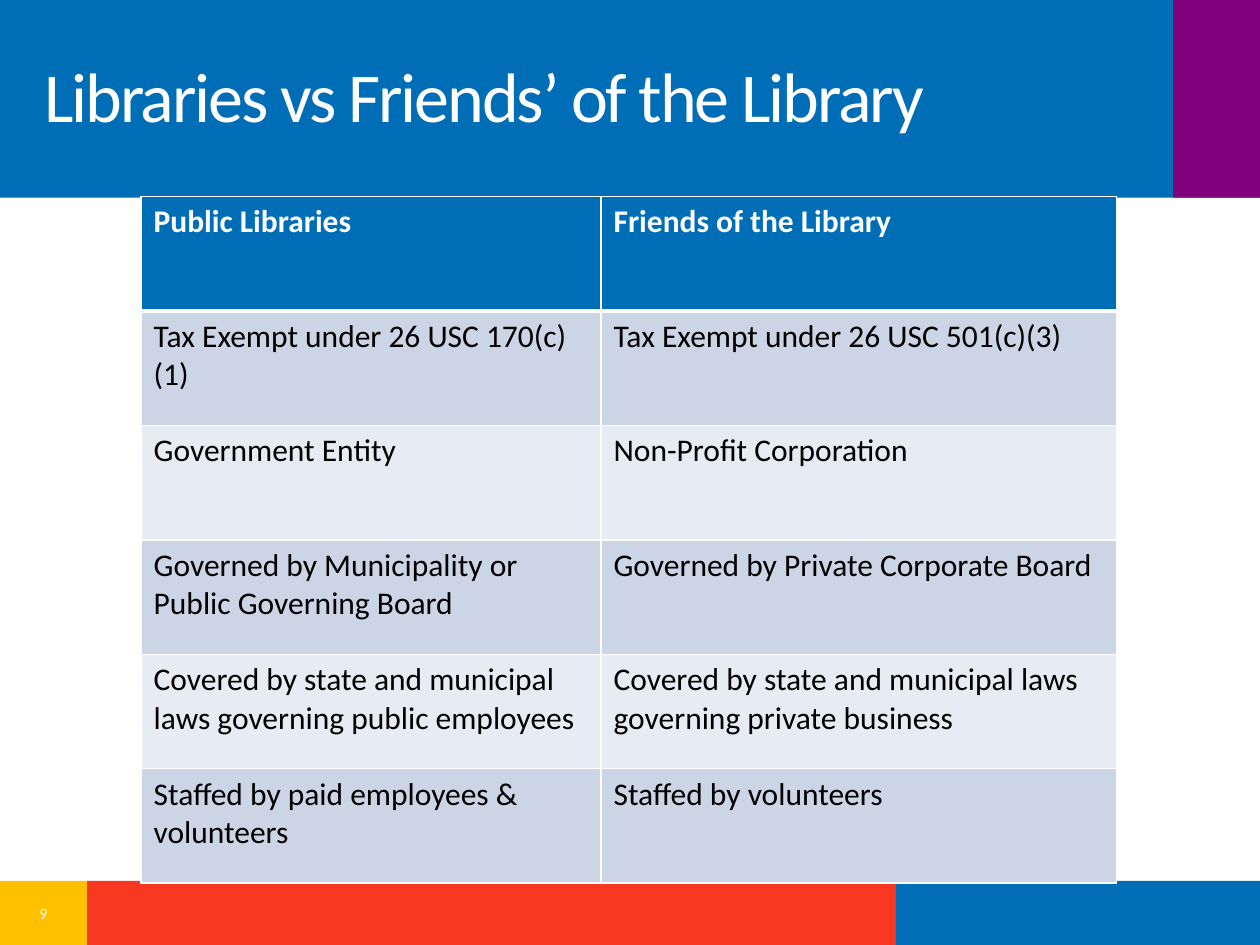
from lxml.etree import SubElement
from pptx import Presentation
from pptx.dml.color import RGBColor
from pptx.enum.shapes import MSO_SHAPE
from pptx.enum.text import MSO_ANCHOR, PP_ALIGN
from pptx.oxml.ns import qn
from pptx.util import Inches, Pt

FONT = "Calibri"
WHITE, BLACK, BLUE = "FFFFFF", "000000", "006EB6"
BANDS = [
    (0.69, 6.99, 8.04, 0.51, "F93822"),
    (0, 6.99, 0.69, 0.51, "FFC000"),
    (7.11, 6.99, 2.89, 0.51, BLUE),
    (0, 0, 10, 1.57, BLUE),
    (9.31, 0, 0.69, 1.57, "82027E"),
]
ROWS = [
    ("Public Libraries", "Friends of the Library"),
    ("Tax Exempt under 26 USC 170(c)(1)", "Tax Exempt under 26 USC 501(c)(3)"),
    ("Government Entity", "Non-Profit Corporation"),
    ("Governed by Municipality or Public Governing Board",
     "Governed by Private Corporate Board"),
    ("Covered by state and municipal laws governing public employees",
     "Covered by state and municipal laws governing private business"),
    ("Staffed by paid employees & volunteers", "Staffed by volunteers"),
]
WIDTHS = (3.65, 4.09)
ROW_HEIGHT = 5.45 / len(ROWS)


def rgb(code):
    return RGBColor.from_string(code)


def style(part, size, color, bold=False):
    """Format every run of a paragraph."""
    for run in part.runs:
        font = run.font
        font.name, font.size, font.bold = FONT, Pt(size), bold
        font.color.rgb = rgb(color)


def add_band(slide, left, top, width, height, color):
    band = slide.shapes.add_shape(
        MSO_SHAPE.RECTANGLE, Inches(left), Inches(top), Inches(width), Inches(height))
    band.shadow.inherit = False
    band.fill.solid()
    band.fill.fore_color.rgb = rgb(color)
    band.line.fill.background()


def set_title(slide, text):
    title = slide.shapes.title
    title.left, title.top = Inches(0.25), Inches(0.11)
    title.width, title.height = Inches(8.62), Inches(1.45)
    frame = title.text_frame
    frame.text = text
    frame.word_wrap = True
    frame.vertical_anchor = MSO_ANCHOR.MIDDLE
    part = frame.paragraphs[0]
    part.alignment = PP_ALIGN.LEFT
    part.line_spacing = 0.7
    style(part, 40, WHITE)
    part.runs[0].font._element.set("spc", "-120")
    # Bring the title in front of the bands
    slide.shapes._spTree.append(title._element)


def add_border(cell, side, width):
    line = SubElement(cell._tc.get_or_add_tcPr(), qn(f"a:ln{side}"), w=str(Pt(width)))
    fill = SubElement(line, qn("a:solidFill"))
    SubElement(fill, qn("a:srgbClr"), val=WHITE)


def fill_cell(cell, text, row):
    head = row == 0
    widths = {"L": 1, "R": 1, "T": 3 if row == 1 else 1, "B": 3 if head else 1}
    for side, width in widths.items():
        add_border(cell, side, width)
    cell.fill.solid()
    cell.fill.fore_color.rgb = rgb(BLUE if head else "CCD5E5" if row % 2 else "E7EBF3")
    cell.text_frame.text = text
    style(cell.text_frame.paragraphs[0], 18, WHITE if head else BLACK, head)


def add_grid(slide):
    table = slide.shapes.add_table(
        len(ROWS), len(WIDTHS), Inches(1.12), Inches(1.56),
        Inches(sum(WIDTHS)), Inches(ROW_HEIGHT * len(ROWS))).table
    for column, width in zip(table.columns, WIDTHS):
        column.width = Inches(width)
    for r, texts in enumerate(ROWS):
        table.rows[r].height = Inches(ROW_HEIGHT)
        for c, text in enumerate(texts):
            fill_cell(table.cell(r, c), text, r)


def add_number(slide, text):
    box = slide.shapes.add_textbox(Inches(0), Inches(7.05), Inches(0.69), Inches(0.4))
    frame = box.text_frame
    frame.text = text
    frame.word_wrap = True
    frame.vertical_anchor = MSO_ANCHOR.MIDDLE
    part = frame.paragraphs[0]
    part.alignment = PP_ALIGN.CENTER
    style(part, 9, WHITE)


def main():
    deck = Presentation()
    deck.slide_width, deck.slide_height = Inches(10), Inches(7.5)
    slide = deck.slides.add_slide(deck.slide_layouts[5])
    for band in BANDS:
        add_band(slide, *band)
    set_title(slide, "Libraries vs Friends’ of the Library")
    add_grid(slide)
    add_number(slide, "9")
    deck.save("out.pptx")


if __name__ == "__main__":
    main()
